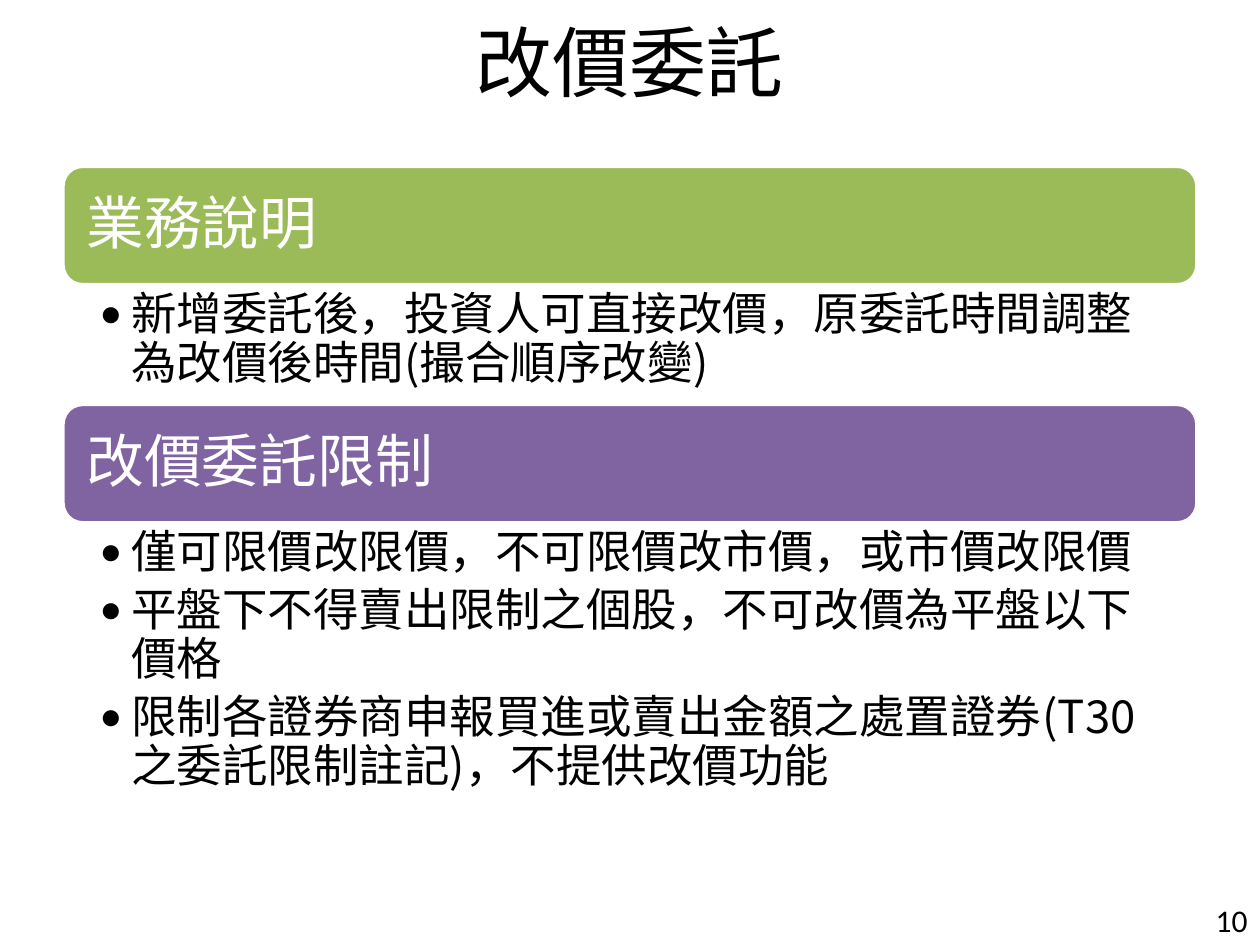
from lxml.etree import SubElement
from pptx import Presentation
from pptx.dml.color import RGBColor
from pptx.enum.shapes import MSO_SHAPE as Shape
from pptx.enum.text import MSO_ANCHOR as Anchor, PP_ALIGN as Align
from pptx.oxml.ns import qn
from pptx.util import Inches, Pt

TITLE = "改價委託"
PAGE_NUMBER = "10"
SECTIONS = [
    ("業務說明", "green", 0.95, [
        "新增委託後，投資人可直接改價，原委託時間調整為改價後時間(撮合順序改變)",
    ]),
    ("改價委託限制", "purple", 2.47, [
        "僅可限價改限價，不可限價改市價，或市價改限價",
        "平盤下不得賣出限制之個股，不可改價為平盤以下價格",
        "限制各證券商申報買進或賣出金額之處置證券(T30之委託限制註記)，不提供改價功能",
    ]),
]
COLORS = {"green": "9BBB59", "purple": "8064A2", "white": "FFFFFF", "black": "000000"}
CJK_FONT = "Noto Sans CJK SC"
WIDTH, HEIGHT = 10, 7.5
MARGIN = WIDTH * 0.05
CONTENT_WIDTH = WIDTH - 2 * MARGIN
SECTIONS_TOP = 1.32
BAR_HEIGHT = 0.94


def color(name):
    return RGBColor.from_string(COLORS[name])


def add_bullet(para, indent):
    props = para._p.get_or_add_pPr()
    props.set("marL", str(Inches(indent)))
    props.set("indent", str(-Inches(indent)))
    SubElement(props, qn("a:buFont"), typeface="Calibri")
    SubElement(props, qn("a:buChar"), char="•")


def write(box, lines, *, size, ink="black", font=CJK_FONT, align=Align.LEFT,
          anchor=Anchor.TOP, insets=(0.1, 0.05, 0.1, 0.05),
          spacing=None, after=None, bullet=False):
    frame = box.text_frame
    frame.word_wrap = True
    frame.vertical_anchor = anchor
    (frame.margin_left, frame.margin_top,
     frame.margin_right, frame.margin_bottom) = map(Inches, insets)
    for index, line in enumerate(lines):
        para = frame.add_paragraph() if index else frame.paragraphs[0]
        if bullet:
            add_bullet(para, 0.25)
        para.alignment = align
        para.line_spacing = spacing
        para.space_after = after
        span = para.add_run()
        span.text = line
        span.font.size = Pt(size)
        span.font.color.rgb = color(ink)
        span.font.name = font
        SubElement(span._r.get_or_add_rPr(), qn("a:ea"), typeface=font)


def add_box(page, left, top, width, height):
    return page.shapes.add_textbox(*map(Inches, (left, top, width, height)))


def add_bar(page, top, fill):
    bar = page.shapes.add_shape(
        Shape.ROUNDED_RECTANGLE,
        *map(Inches, (MARGIN, top, CONTENT_WIDTH, BAR_HEIGHT)))
    bar.shadow.inherit = False
    bar.fill.solid()
    bar.fill.fore_color.rgb = color(fill)
    bar.line.color.rgb = color("white")
    bar.line.width = Pt(2)
    return bar


def main():
    deck = Presentation()
    deck.slide_width, deck.slide_height = Inches(WIDTH), Inches(HEIGHT)
    page = deck.slides.add_slide(deck.slide_layouts[6])

    write(add_box(page, WIDTH - 0.54, HEIGHT - 0.4, 0.54, 0.4), [PAGE_NUMBER],
          size=18, font="Calibri", align=Align.RIGHT)
    write(add_box(page, MARGIN, 0.05, CONTENT_WIDTH, 0.87), [TITLE],
          size=44, align=Align.CENTER, anchor=Anchor.MIDDLE)

    top = SECTIONS_TOP
    for heading, fill, body_height, points in SECTIONS:
        write(add_bar(page, top, fill), [heading], size=33, ink="white",
              anchor=Anchor.MIDDLE, insets=(0.14,) * 4, spacing=0.9, after=Pt(11.5))
        top += BAR_HEIGHT
        write(add_box(page, MARGIN, top, CONTENT_WIDTH, body_height), points, size=26,
              insets=(0.29, 0.05, 0.26, 0.05), spacing=0.9, after=Pt(5), bullet=True)
        top += body_height

    deck.save("out.pptx")


if __name__ == "__main__":
    main()
